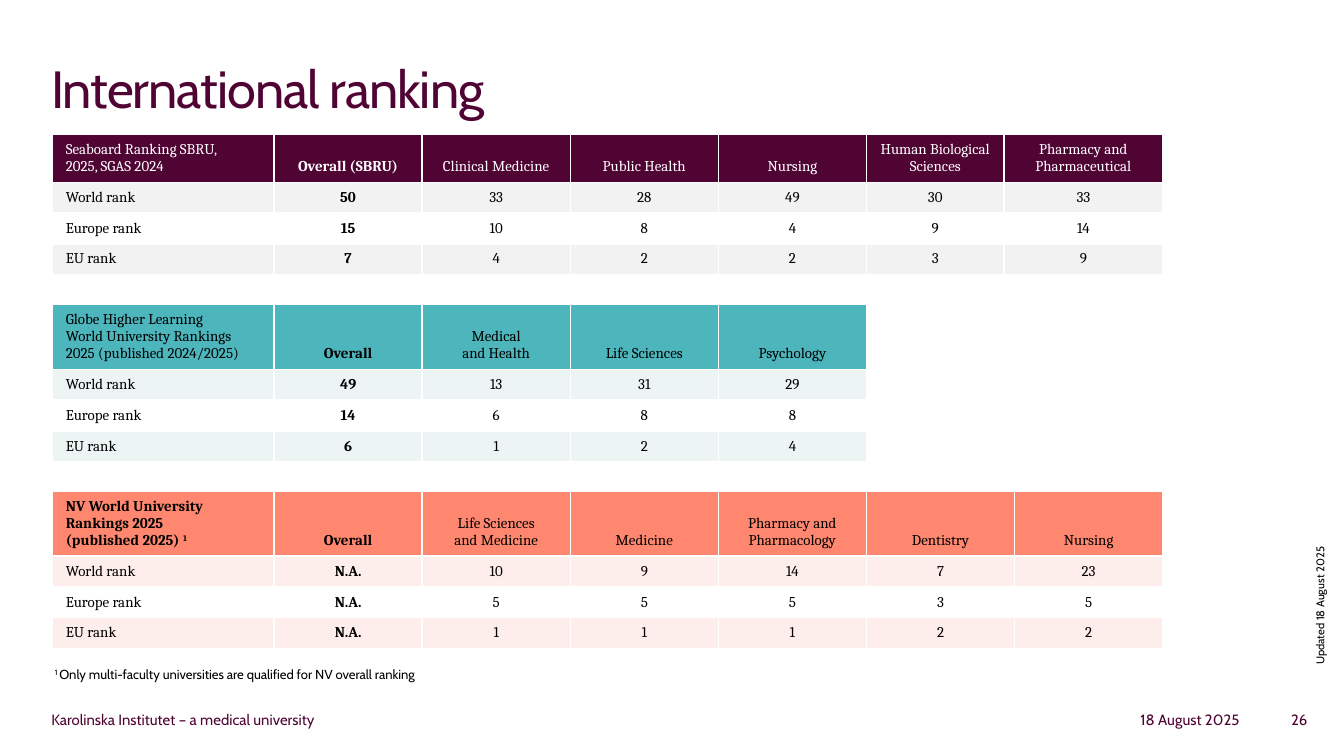
from pptx import Presentation
from pptx.dml.color import RGBColor
from pptx.enum.text import MSO_ANCHOR, MSO_AUTO_SIZE, PP_ALIGN
from pptx.util import Cm, Pt

LEFT, CENTER, RIGHT = PP_ALIGN.LEFT, PP_ALIGN.CENTER, PP_ALIGN.RIGHT
TOP, BOTTOM = MSO_ANCHOR.TOP, MSO_ANCHOR.BOTTOM
NO_FIT = MSO_AUTO_SIZE.NONE

COLORS = {
    "plum": "4F0433",
    "grey": "F2F2F2",
    "teal": "4DB5BC",
    "pale_teal": "EDF4F4",
    "coral": "FF876F",
    "pale_coral": "FEEEEB",
    "white": "FFFFFF",
    "black": "000000",
}

TABLE_LEFT = 0.99
ROW_HEIGHT = 0.58
LABEL_WIDTH = 4.19
VALUE_WIDTH = 2.8
RANK_LABELS = ["World rank", "Europe rank", "EU rank"]

RANKINGS = [
    {
        "top": 2.54,
        "header_height": 0.9,
        "widths": [LABEL_WIDTH] + [VALUE_WIDTH] * 4 + [2.6, 3],
        "colors": ("plum", "white", "grey"),
        "bold_label": False,
        "headers": ["Seaboard Ranking SBRU,\v2025, SGAS 2024", "Overall (SBRU)",
                    "Clinical Medicine", "Public Health", "Nursing",
                    "Human Biological Sciences", "Pharmacy and Pharmaceutical"],
        "ranks": [[50, 33, 28, 49, 30, 33], [15, 10, 8, 4, 9, 14], [7, 4, 2, 2, 3, 9]],
    },
    {
        "top": 5.75,
        "header_height": 1.21,
        "widths": [LABEL_WIDTH] + [VALUE_WIDTH] * 4,
        "colors": ("teal", "black", "pale_teal"),
        "bold_label": False,
        "headers": ["Globe Higher Learning\nWorld University Rankings\n2025 (published 2024/2025)",
                    "Overall", "Medical\vand Health", "Life Sciences", "Psychology"],
        "ranks": [[49, 13, 31, 29], [14, 6, 8, 8], [6, 1, 2, 4]],
    },
    {
        "top": 9.28,
        "header_height": 1.21,
        "widths": [LABEL_WIDTH] + [VALUE_WIDTH] * 6,
        "colors": ("coral", "black", "pale_coral"),
        "bold_label": True,
        "headers": ["NV World University Rankings 2025\v(published 2025) ^1", "Overall",
                    "Life Sciences\vand Medicine", "Medicine",
                    "Pharmacy and\nPharmacology", "Dentistry", "Nursing"],
        "ranks": [["N.A.", 10, 9, 14, 7, 23], ["N.A.", 5, 5, 5, 3, 5], ["N.A.", 1, 1, 1, 2, 2]],
    },
]


def rgb(name):
    return RGBColor.from_string(COLORS[name])


def add_runs(paragraph, text, font_format):
    for line_number, line in enumerate(text.split("\v")):
        if line_number:
            paragraph.add_line_break()
        for part_number, part in enumerate(line.split("^")):
            if not part:
                continue
            run = paragraph.add_run()
            run.text = part
            for attribute, value in font_format.items():
                setattr(run.font, attribute, value)
            if part_number % 2:
                run._r.get_or_add_rPr().set("baseline", "30000")


def write(frame, text, color, align=LEFT, **font_format):
    for number, line in enumerate(text.split("\n")):
        paragraph = frame.add_paragraph() if number else frame.paragraphs[0]
        paragraph.alignment = align
        add_runs(paragraph, line, font_format)
        for run in paragraph.runs:
            run.font.color.rgb = rgb(color)


def add_title(slide, text):
    title = slide.shapes.title
    placement = {"left": 0.71, "top": 0.94, "width": 23.98, "height": 2.39}
    for attribute, value in placement.items():
        setattr(title, attribute, Cm(value))
    frame = title.text_frame
    frame.auto_size = NO_FIT
    frame.vertical_anchor = TOP
    write(frame, text, "plum", name="Cabin", size=Pt(28))
    for run in frame.paragraphs[0].runs:
        run._r.get_or_add_rPr().set("spc", "-50")


def add_label(slide, text, box, color, size, align=LEFT, rotation=0):
    label = slide.shapes.add_textbox(*map(Cm, box))
    label.rotation = rotation
    frame = label.text_frame
    frame.word_wrap = True
    frame.auto_size = NO_FIT
    frame.vertical_anchor = TOP
    write(frame, text, color, align, name="Cabin", size=Pt(size))


def add_ranking(slide, ranking):
    header_fill, header_text, band = ranking["colors"]
    widths = ranking["widths"]
    heights = [ranking["header_height"]] + [ROW_HEIGHT] * len(RANK_LABELS)
    rows = [ranking["headers"]]
    rows += [[label, *ranks] for label, ranks in zip(RANK_LABELS, ranking["ranks"])]
    table = slide.shapes.add_table(
        len(rows), len(widths), Cm(TABLE_LEFT), Cm(ranking["top"]),
        Cm(sum(widths)), Cm(sum(heights))).table
    for column, width in zip(table.columns, widths):
        column.width = Cm(width)
    for row, height in zip(table.rows, heights):
        row.height = Cm(height)

    for r, values in enumerate(rows):
        is_header = r == 0
        fill = header_fill if is_header else band if r % 2 else "white"
        for c, value in enumerate(values):
            cell = table.cell(r, c)
            cell.fill.solid()
            cell.fill.fore_color.rgb = rgb(fill)
            cell.vertical_anchor = BOTTOM if is_header and c else TOP
            bold = c == 1 or (is_header and c == 0 and ranking["bold_label"])
            write(cell.text_frame, str(value), header_text if is_header else "black",
                  CENTER if c else LEFT, name="Cambria", size=Pt(8), bold=bold)


def main():
    deck = Presentation()
    deck.slide_width, deck.slide_height = Cm(25.4), Cm(14.29)
    slide = deck.slides.add_slide(deck.slide_layouts[5])
    add_title(slide, "International ranking")
    for ranking in RANKINGS:
        add_ranking(slide, ranking)
    add_label(slide, "^1 ^Only multi-faculty universities are qualified for NV overall ranking",
              (0.79, 12.47, 20.75, 0.6), "black", 7)
    add_label(slide, "Updated 18 August 2025", (21.56, 9.04, 6.91, 0.64), "black", 6,
              rotation=270)
    footers = [
        ("Karolinska Institutet – a medical university", 0.72, 7.8, LEFT),
        ("18 August 2025", 18.4, 5.28, RIGHT),
        ("26", 23.05, 1.91, RIGHT),
    ]
    for text, left, width, align in footers:
        add_label(slide, text, (left, 13.31, width, 0.48), "plum", 8, align)
    deck.save("out.pptx")


if __name__ == "__main__":
    main()
